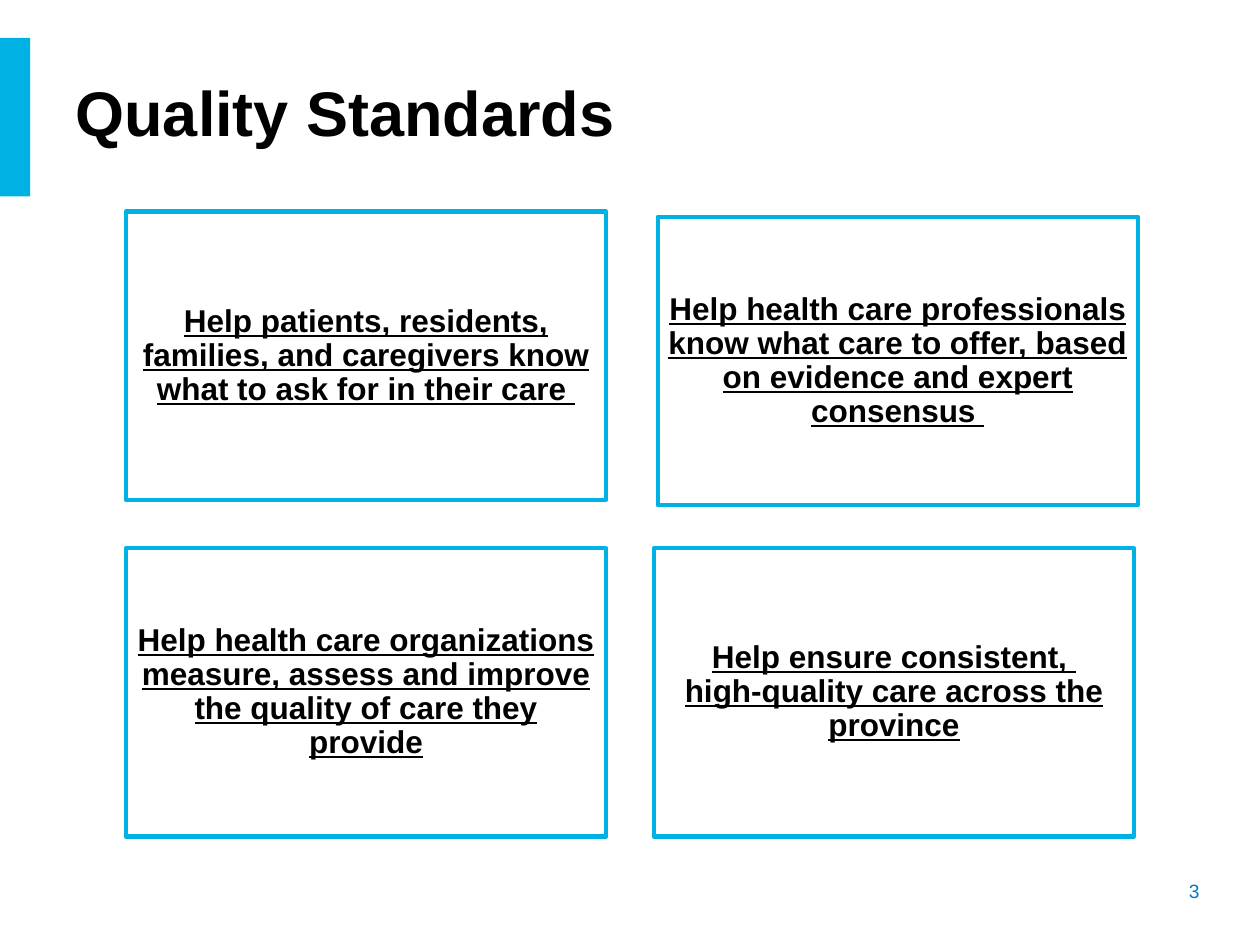
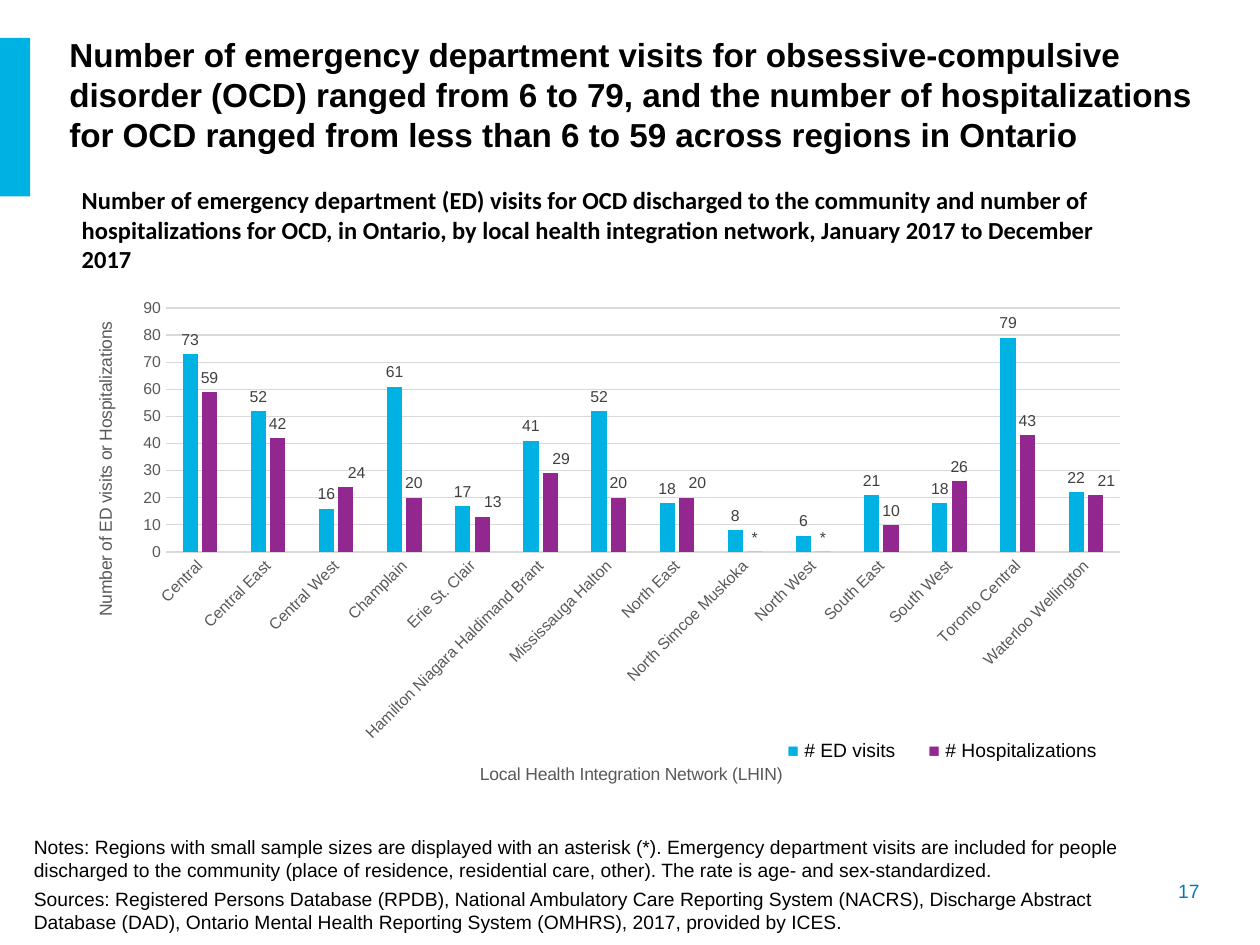
"""Build two slides on quality standards and regional OCD care."""
from dataclasses import dataclass

from lxml.etree import SubElement
from pptx import Presentation
from pptx.chart.data import CategoryChartData as ChartData
from pptx.dml.color import RGBColor as RGB
from pptx.enum.chart import XL_CHART_TYPE as Kind
from pptx.enum.chart import XL_LABEL_POSITION as Spot
from pptx.enum.chart import XL_TICK_MARK as Tick
from pptx.enum.shapes import MSO_SHAPE as Form
from pptx.enum.text import MSO_ANCHOR as Anchor
from pptx.enum.text import MSO_AUTO_SIZE as Fit
from pptx.enum.text import PP_ALIGN as Align
from pptx.oxml import parse_xml
from pptx.oxml.ns import nsdecls, qn
from pptx.util import Inches, Pt


@dataclass(frozen=True)
class Theme:
    """Colours, fonts and type sizes."""
    cyan: str = "00B2E3"
    plum: str = "92278F"
    blue: str = "047BC1"
    black: str = "000000"
    grey: str = "595959"
    dark: str = "404040"
    rule: str = "D9D9D9"
    font: str = "Arial"
    alt: str = "Calibri"
    big: int = 36
    head: int = 19
    card: int = 18
    sub: int = 14
    note: int = 11
    tick: int = 9
    axis: int = 10


T = Theme()

GOALS = {
    "title": "Quality Standards",
    "page": "3",
    "cards": [
        (1, 1.68, "Help patients, residents, families, and caregivers know "
                  "what to ask for in their care "),
        (5.22, 1.72, "Help health care professionals know what care to offer, "
                     "based on evidence and expert consensus "),
        (1, 4.35, "Help health care organizations measure, assess and improve "
                  "the quality of care they provide"),
        (5.19, 4.35, "Help ensure consistent, \n"
                     "high-quality care across the province"),
    ],
}

VISITS = {
    "title": "Number of emergency department visits for obsessive-compulsive "
             "disorder (OCD) ranged from 6 to 79, and the number of "
             "hospitalizations for OCD ranged from less than 6 to 59 across "
             "regions in Ontario",
    "page": "17",
    "sub": "Number of emergency department (ED) visits for OCD discharged to "
           "the community and number of hospitalizations for OCD, in Ontario, "
           "by local health integration network, January 2017 to December 2017",
    "notes": [
        "Notes: Regions with small sample sizes are displayed with an asterisk "
        "(*). Emergency department visits are included for people discharged "
        "to the community (place of residence, residential care, other). The "
        "rate is age- and sex-standardized.",
        "Sources: Registered Persons Database (RPDB), National Ambulatory Care "
        "Reporting System (NACRS), Discharge Abstract Database (DAD), Ontario "
        "Mental Health Reporting System (OMHRS), 2017, provided by ICES.",
    ],
    "x": "Local Health Integration Network (LHIN)",
    "y": "Number of ED visits or Hospitalizations",
    "series": [("# ED visits", T.cyan), ("# Hospitalizations", T.plum)],
    "rows": [
        ("Central", 73, 59), ("Central East", 52, 42), ("Central West", 16, 24),
        ("Champlain", 61, 20), ("Erie St. Clair", 17, 13),
        ("Hamilton Niagara Haldimand Brant", 41, 29),
        ("Mississauga Halton", 52, 20), ("North East", 18, 20),
        ("North Simcoe Muskoka", 8, 0), ("North West", 6, 0),
        ("South East", 21, 10), ("South West", 18, 26),
        ("Toronto Central", 79, 43), ("Waterloo Wellington", 22, 21),
    ],
    "nudged": [2, 4, 5, 7, 13],
}


def style(font, size, color=T.black, bold=False, name=T.font):
    font.name, font.size, font.bold = name, Pt(size), bold
    font.color.rgb = RGB.from_string(color)


def add_text(slide, at, texts, size, color=T.black, bold=False, name=T.font,
             align=Align.LEFT, gap=0):
    frame = slide.shapes.add_textbox(*map(Inches, at)).text_frame
    frame.word_wrap = True
    for i, text in enumerate(texts):
        para = frame.add_paragraph() if i else frame.paragraphs[0]
        para.text, para.alignment = text, align
        para.space_before = Pt(gap if i else 0)
        style(para.font, size, color, bold, name)
    return frame


def add_rect(slide, at, fill=None, line=None):
    rect = slide.shapes.add_shape(Form.RECTANGLE, *map(Inches, at))
    rect.shadow.inherit = False
    if fill:
        rect.fill.solid()
        rect.fill.fore_color.rgb = RGB.from_string(fill)
    else:
        rect.fill.background()
    if line:
        rect.line.color.rgb = RGB.from_string(line)
        rect.line.width = Pt(2.5)
    else:
        rect.line.fill.background()
    return rect


def add_slide(deck, data, at, size, anchor):
    slide = deck.slides.add_slide(deck.slide_layouts[5])
    add_rect(slide, (0, 0.3, 0.24, 1.26), fill=T.cyan)
    add_text(slide, (8.45, 6.93, 1.17, 0.29), [data["page"]], T.note, T.blue,
             align=Align.RIGHT)
    title = slide.shapes.title
    title.left, title.top, title.width, title.height = map(Inches, at)
    frame = title.text_frame
    frame.text = data["title"]
    frame.auto_size, frame.word_wrap = Fit.NONE, True
    frame.vertical_anchor = anchor
    frame.paragraphs[0].alignment = Align.LEFT
    style(frame.paragraphs[0].font, size, bold=True)
    return slide


def add_card(slide, left, top, text):
    card = add_rect(slide, (left, top, 3.81, 2.29), line=T.cyan)
    frame = card.text_frame
    frame.word_wrap, frame.vertical_anchor = True, Anchor.MIDDLE
    frame.margin_left = frame.margin_right = Inches(0.07)
    frame.margin_top = frame.margin_bottom = Inches(0.07)
    para = frame.paragraphs[0]
    para.text, para.alignment, para.line_spacing = text, Align.CENTER, 0.9
    style(para.font, T.card, bold=True)
    para.font.underline = True


def place(node, index, inner=False, **spots):
    for old in node.findall(qn("c:layout")):
        node.remove(old)
    layout = parse_xml(f"<c:layout {nsdecls('c')}><c:manualLayout/></c:layout>")
    pairs = [("layoutTarget", "inner")] if inner else []
    if node.tag != qn("c:dLbl"):
        pairs += [("xMode", "edge"), ("yMode", "edge")]
    for key, val in pairs + list(spots.items()):
        SubElement(layout[0], qn(f"c:{key}")).set("val", str(val))
    node.insert(index, layout)


def set_axis(axis, title):
    axis.major_tick_mark = axis.minor_tick_mark = Tick.NONE
    style(axis.tick_labels.font, T.tick, T.grey)
    para = axis.axis_title.text_frame.paragraphs[0]
    para.text = title
    style(para.font, T.axis, T.grey)


def add_bars(slide, data):
    source = ChartData()
    names, *cols = zip(*data["rows"])
    source.categories = names
    for (name, _), vals in zip(data["series"], cols):
        source.add_series(name, vals)
    at = map(Inches, (0.55, 2.28, 8.51, 4.12))
    chart = slide.shapes.add_chart(Kind.COLUMN_CLUSTERED, *at, source).chart
    chart.has_legend = chart.has_title = False
    style(chart.font, T.axis)
    plot = chart.plots[0]
    plot.gap_width, plot.overlap, plot.vary_by_categories = 219, -27, False
    for bars, (_, color) in zip(plot.series, data["series"]):
        bars.format.fill.solid()
        bars.format.fill.fore_color.rgb = RGB.from_string(color)
        labels = bars.data_labels
        labels.show_value, labels.position = True, Spot.OUTSIDE_END
        style(labels.font, T.tick, T.dark)
    last = plot.series[1]
    for i, val in enumerate(cols[1]):
        if val and i not in data["nudged"]:
            continue
        label = last.points[i].data_label
        if val:
            style(label.font, T.tick, T.dark)
        else:
            para = label.text_frame.paragraphs[0]
            para.text = "*"
            style(para.font, T.tick, T.dark)
        label.position = Spot.OUTSIDE_END
    cat, val = chart.category_axis, chart.value_axis
    set_axis(cat, data["x"])
    set_axis(val, data["y"])
    val.minimum_scale, val.maximum_scale, val.major_unit = 0, 90, 10
    val.format.line.fill.background()
    for line in (cat.format.line, val.major_gridlines.format.line):
        line.color.rgb = RGB.from_string(T.rule)
        line.width = Pt(0.75)
    root = chart.element
    root.xpath(".//c:catAx/c:txPr/a:bodyPr")[0].set("rot", "-2700000")
    root.xpath(".//c:valAx/c:title//a:bodyPr")[0].set("rot", "-5400000")
    place(root.xpath(".//c:plotArea")[0], 0, True, x=0.09, y=0.04, w=0.89, h=0.47)
    place(root.xpath(".//c:catAx/c:title")[0], 1, x=0.38, y=0.91)
    place(root.xpath(".//c:valAx/c:title")[0], 1, x=0.02, y=0.06)
    for node in root.xpath(".//c:dLbl[not(c:tx)]"):
        place(node, 1, x=0.01, y=0)


def add_key(slide, series):
    para = add_text(slide, (6.15, 5.81, 3.67, 0.28), [""], T.note).paragraphs[0]
    for i, (name, color) in enumerate(series):
        for text, tint in (("	■ " if i else "■ ", color), (name, T.black)):
            run = para.add_run()
            run.text = text
            style(run.font, T.note, tint)
    tabs = parse_xml(f"<a:tabLst {nsdecls('a')}><a:tab algn='l'/></a:tabLst>")
    tabs[0].set("pos", str(Inches(1.12)))
    props = para.runs[0].font and para.line_spacing
    para.space_before = Pt(0)
    props = para.runs[0].text and slide.shapes[-1].element.xpath(".//a:pPr")[0]
    rest = props.find(qn("a:defRPr"))
    if rest is None:
        props.append(tabs)
    else:
        rest.addprevious(tabs)


def main():
    deck = Presentation()
    deck.slide_width, deck.slide_height = Inches(10), Inches(7.5)

    goals = add_slide(deck, GOALS, (0.5, 0.5, 7.81, 0.77), T.big, Anchor.MIDDLE)
    for card in GOALS["cards"]:
        add_card(goals, *card)

    visits = add_slide(deck, VISITS, (0.45, 0.22, 9.37, 1.06), T.head, Anchor.TOP)
    add_text(visits, (0.17, 6.58, 8.9, 0.9), VISITS["notes"], T.note, gap=3.3)
    add_text(visits, (0.55, 1.42, 8.59, 0.81), [VISITS["sub"]], T.sub, bold=True,
             name=T.alt)
    add_bars(visits, VISITS)
    add_key(visits, VISITS["series"])
    deck.save("out.pptx")


if __name__ == "__main__":
    main()
